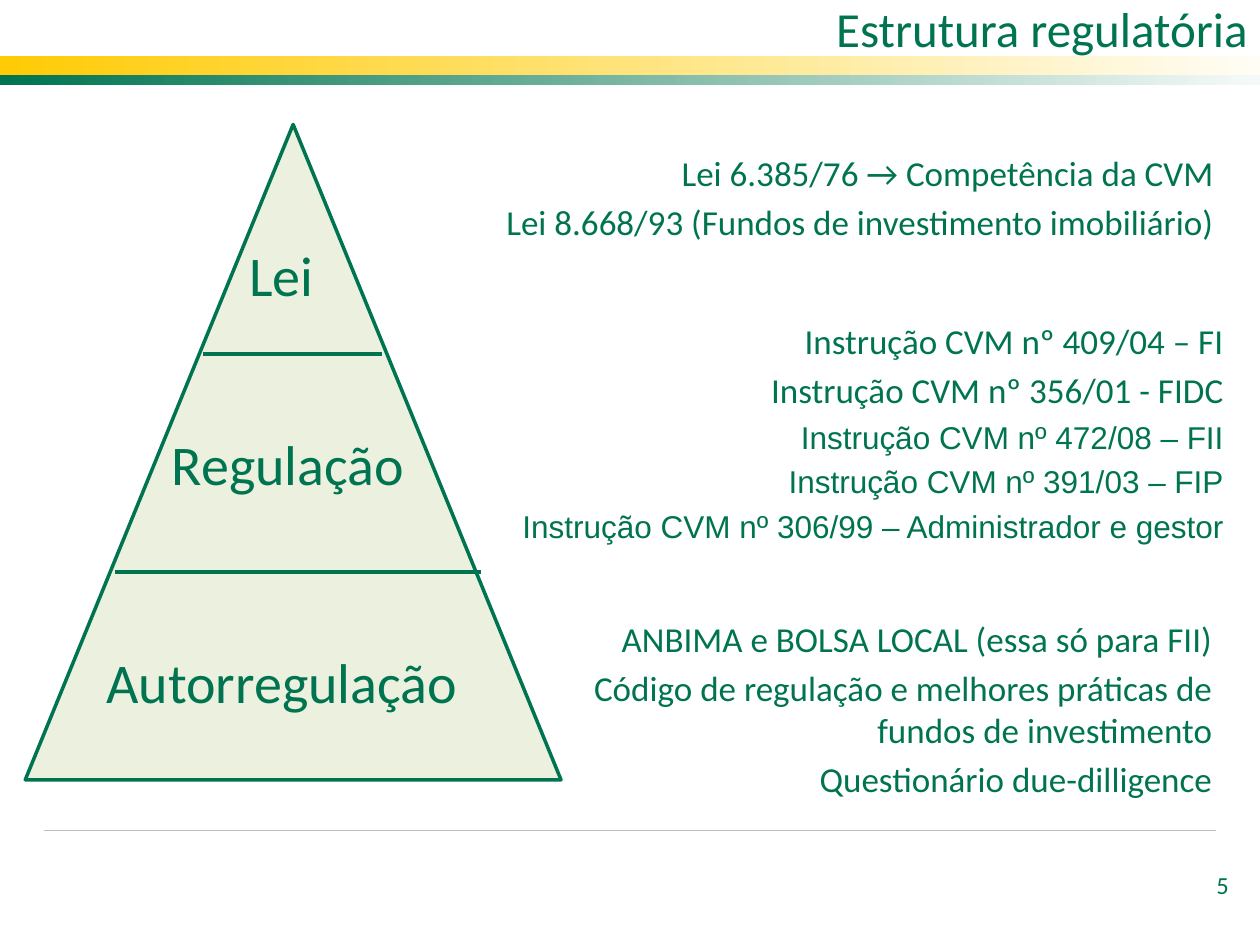
from lxml import etree
from pptx import Presentation
from pptx.dml.color import RGBColor
from pptx.enum.shapes import MSO_CONNECTOR, MSO_SHAPE
from pptx.enum.text import MSO_ANCHOR, PP_ALIGN
from pptx.oxml.ns import qn
from pptx.util import Cm, Pt

RECT = MSO_SHAPE.RECTANGLE
PEAK = MSO_SHAPE.ISOSCELES_TRIANGLE
LINE = MSO_CONNECTOR.STRAIGHT
MID, TOP = MSO_ANCHOR.MIDDLE, MSO_ANCHOR.TOP
RIGHT, MITTE = PP_ALIGN.RIGHT, PP_ALIGN.CENTER

HUES = {
    "green": "007450",
    "mint": "F5FAF8",
    "gold": "FFCB05",
    "cream": "FFFDF5",
    "pale": "EBF1DE",
    "gray": "BFBFBF",
}


def hue(name):
    """Return the colour of that name."""
    return RGBColor.from_string(HUES[name])


def write(par, text, size=20, font="Calibri", color="green", align=RIGHT, gap=0):
    """Fill a paragraph with formatted text."""
    par.text = text
    par.alignment = align
    par.space_before = Pt(gap)
    par.font.size = Pt(size)
    par.font.name = font
    par.font.color.rgb = hue(color)


class Deck:
    """Hold the style and the current slide."""

    def __init__(self):
        """Open a deck with one blank slide."""
        self.show = Presentation()
        self.show.slide_width, self.show.slide_height = Cm(25.4), Cm(19.05)
        self.page = self.show.slides.add_slide(self.show.slide_layouts[6])

    def bar(self, y, tall, start, end):
        """Draw a full-width band that fades to the right."""
        band = self.page.shapes.add_shape(RECT, 0, Cm(y), self.show.slide_width, Cm(tall))
        band.shadow.inherit = False
        band.line.fill.background()
        band.fill.gradient()
        band.fill.gradient_angle = 0
        for stop, name, spot in zip(band.fill.gradient_stops, (start, end), (0, 1)):
            stop.color.rgb = hue(name)
            stop.position = spot

    def rule(self, left, right, y, color="green", width=2):
        """Draw a level line."""
        line = self.page.shapes.add_connector(LINE, Cm(left), Cm(y), Cm(right), Cm(y))
        line.line.color.rgb = hue(color)
        line.line.width = Pt(width)
        etree.SubElement(line._element.spPr, qn("a:effectLst"))

    def peak(self, *box):
        """Draw the pyramid."""
        shape = self.page.shapes.add_shape(PEAK, *map(Cm, box))
        shape.shadow.inherit = False
        shape.fill.solid()
        shape.fill.fore_color.rgb = hue("pale")
        shape.line.color.rgb = hue("green")
        shape.line.width = Pt(2)

    def text(self, box, rows, anchor=TOP, **style):
        """Add a text box with one paragraph for each (text, format) row."""
        frame = self.page.shapes.add_textbox(*map(Cm, box)).text_frame
        frame.word_wrap = True
        frame.vertical_anchor = anchor
        for i, (words, extra) in enumerate(rows):
            par = frame.add_paragraph() if i else frame.paragraphs[0]
            write(par, words, gap=4 if i else 0, **{**style, **extra})


def main():
    """Build and save the slide."""
    deck = Deck()
    deck.bar(1.12, 0.4, "gold", "cream")
    deck.bar(1.52, 0.2, "green", "mint")
    deck.rule(0.89, 24.51, 16.74, "gray", 0.75)
    deck.text((2.54, 0, 22.86, 1.12), [("Estrutura regulatória", {})], MID, size=28)
    deck.text((19.1, 17.32, 5.92, 1.02), [("5", {})], MID, size=14)

    deck.peak(0.51, 2.51, 10.8, 13.21)
    deck.rule(4.09, 7.7, 7.14)
    deck.rule(2.31, 9.7, 11.53)
    for name, left, top, wide in (
        ("Lei", 4.57, 4.72, 2.21),
        ("Regulação", 1.91, 8.53, 7.8),
        ("Autorregulação", 1.09, 12.93, 9.19),
    ):
        deck.text((left, top, wide, 2.59), [(name, {})], size=32, align=MITTE)

    arial = {"font": "Arial", "size": 18}
    deck.text((9.91, 2.92, 14.81, 2.59), [
        ("Lei 6.385/76 → Competência da CVM", {}),
        ("Lei 8.668/93 (Fundos de investimento imobiliário)", {}),
    ])
    deck.text((10.11, 6.32, 14.81, 2.59), [
        ("Instrução CVM nº 409/04 – FI", {}),
        ("Instrução CVM nº 356/01 - FIDC", {}),
        ("Instrução CVM nº 472/08 – FII", arial),
        ("Instrução CVM nº 391/03 – FIP", arial),
        ("Instrução CVM nº 306/99 – Administrador e gestor", arial),
    ])
    deck.text((10.69, 12.32, 14, 2.59), [
        ("ANBIMA e BOLSA LOCAL (essa só para FII)", {}),
        ("Código de regulação e melhores práticas de fundos de investimento", {}),
        ("Questionário due-dilligence", {}),
    ])
    deck.show.save("out.pptx")


if __name__ == "__main__":
    main()
